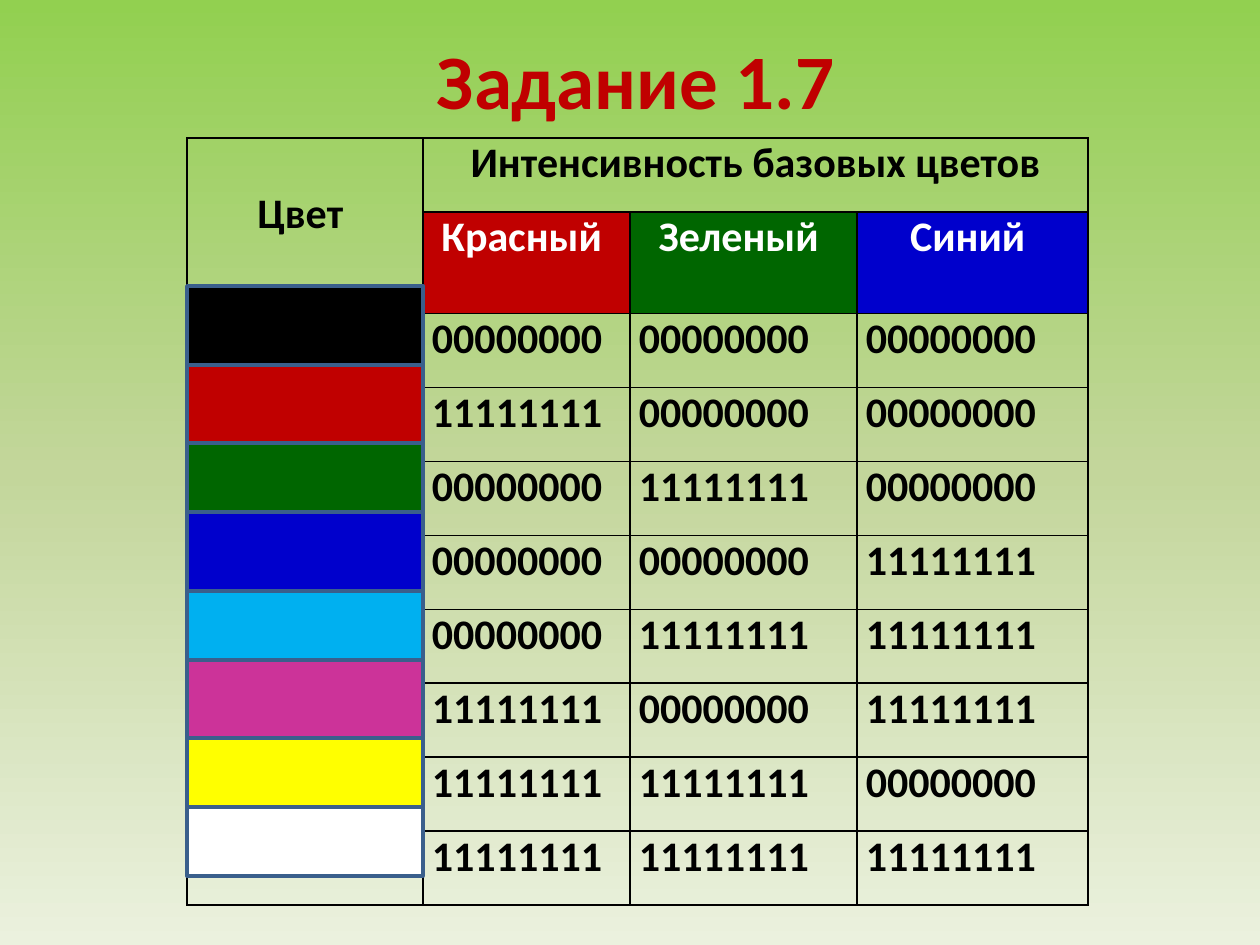
from copy import deepcopy
from dataclasses import dataclass

from lxml import etree
from pptx import Presentation
from pptx.dml.color import RGBColor
from pptx.enum.shapes import MSO_SHAPE
from pptx.enum.text import MSO_ANCHOR, PP_ALIGN
from pptx.oxml.ns import qn
from pptx.util import Emu, Pt

RECT = MSO_SHAPE.RECTANGLE
MIDDLE = MSO_ANCHOR.MIDDLE
LEFT, CENTER = PP_ALIGN.LEFT, PP_ALIGN.CENTER
FONT = "Calibri"

COLORS = {
    "black": "000000", "red": "C00000", "green": "006600", "blue": "0000CC",
    "cyan": "00B0F0", "pink": "CC3399", "yellow": "FFFF00", "white": "FFFFFF",
    "edge": "3A5F8C", "top": "92D050", "mid": "C3D69B", "base": "EBF1DE",
}


@dataclass
class Head:
    row: int
    col: int
    text: str
    color: str = "black"
    fill: str = ""
    drop: int = 0


@dataclass
class Swatch:
    color: str
    height: int
    bits: str


HEADS = [
    Head(0, 0, "Цвет ", drop=51),
    Head(0, 1, "Интенсивность базовых цветов"),
    Head(1, 1, "Красный ", "white", "red"),
    Head(1, 2, "Зеленый ", "white", "green"),
    Head(1, 3, "Синий ", "white", "blue"),
]
SWATCHES = [
    Swatch("black", 79, "000"), Swatch("red", 78, "100"),
    Swatch("green", 69, "010"), Swatch("blue", 79, "001"),
    Swatch("cyan", 69, "011"), Swatch("pink", 78, "101"),
    Swatch("yellow", 69, "110"), Swatch("white", 69, "111"),
]
X, Y, SWATCH_Y = 187, 138, 286
COLS = [236, 207, 227, 231]
ROW = 74


def px(n: int) -> Emu:
    return Emu(round(n * 914400 / 126))


def rgb(name: str) -> RGBColor:
    return RGBColor.from_string(COLORS[name])


def write(frame, text: str, size: int, color: str, align) -> None:
    par = frame.paragraphs[0]
    par.text = text
    par.alignment = align
    font = par.runs[0].font
    font.name, font.size, font.bold = FONT, Pt(size), True
    font.color.rgb = rgb(color)


def frame_cell(cell) -> None:
    """Thin black borders, tight margins and no fill."""
    props = cell._tc.get_or_add_tcPr()
    for side in ("lnL", "lnR", "lnT", "lnB"):
        line = etree.SubElement(props, qn(f"a:{side}"), w=str(Pt(1)))
        fill = etree.SubElement(line, qn("a:solidFill"))
        etree.SubElement(fill, qn("a:srgbClr"), val=COLORS["black"])
    cell.margin_left = cell.margin_right = px(9)
    cell.margin_top = cell.margin_bottom = 0
    cell.fill.background()


def paint(slide) -> None:
    fill = slide.background.fill
    fill.gradient()
    fill.gradient_angle = 270
    stops = slide.element.find(".//" + qn("a:gsLst"))
    stops.append(deepcopy(stops[-1]))
    for i, (stop, name) in enumerate(zip(fill.gradient_stops, ("top", "mid", "base"))):
        stop.position = i / 2
        stop.color.rgb = rgb(name)


def add_title(slide, text: str) -> None:
    box = slide.shapes.add_textbox(px(69), 0, px(1134), px(158))
    box.text_frame.word_wrap = True
    box.text_frame.vertical_anchor = MIDDLE
    write(box.text_frame, text, 44, "red", CENTER)


def add_grid(slide) -> None:
    rows = len(SWATCHES) + 2
    table = slide.shapes.add_table(
        rows, len(COLS), px(X), px(Y), px(sum(COLS)), px(ROW * rows)).table
    table.first_row = table.horz_banding = False
    for col, width in zip(table.columns, COLS):
        col.width = px(width)
    for row in table.rows:
        row.height = px(ROW)
    for cell in table.iter_cells():
        frame_cell(cell)

    # Headings
    table.cell(0, 0).merge(table.cell(1, 0))
    table.cell(0, 1).merge(table.cell(0, 3))
    for head in HEADS:
        cell = table.cell(head.row, head.col)
        cell.margin_top = px(head.drop)
        write(cell.text_frame, head.text, 24, head.color, CENTER)
        if head.fill:
            cell.fill.solid()
            cell.fill.fore_color.rgb = rgb(head.fill)

    # Channel values
    for r, swatch in enumerate(SWATCHES, 2):
        for c, bit in enumerate(swatch.bits, 1):
            write(table.cell(r, c).text_frame, bit * 8, 24, "black", LEFT)


def add_swatch(slide, swatch: Swatch, top: int) -> None:
    shape = slide.shapes.add_shape(RECT, px(X), px(top), px(COLS[0]), px(swatch.height))
    shape.shadow.inherit = False
    shape.fill.solid()
    shape.fill.fore_color.rgb = rgb(swatch.color)
    shape.line.color.rgb = rgb("edge")
    shape.line.width = Pt(2)


def main() -> None:
    deck = Presentation()
    deck.slide_width, deck.slide_height = px(1260), px(945)
    slide = deck.slides.add_slide(deck.slide_layouts[6])
    paint(slide)
    add_title(slide, "Задание 1.7")
    add_grid(slide)

    # Colour samples, stacked over the first column
    top = SWATCH_Y
    for swatch in SWATCHES:
        add_swatch(slide, swatch, top)
        top += swatch.height
    deck.save("out.pptx")


if __name__ == "__main__":
    main()
